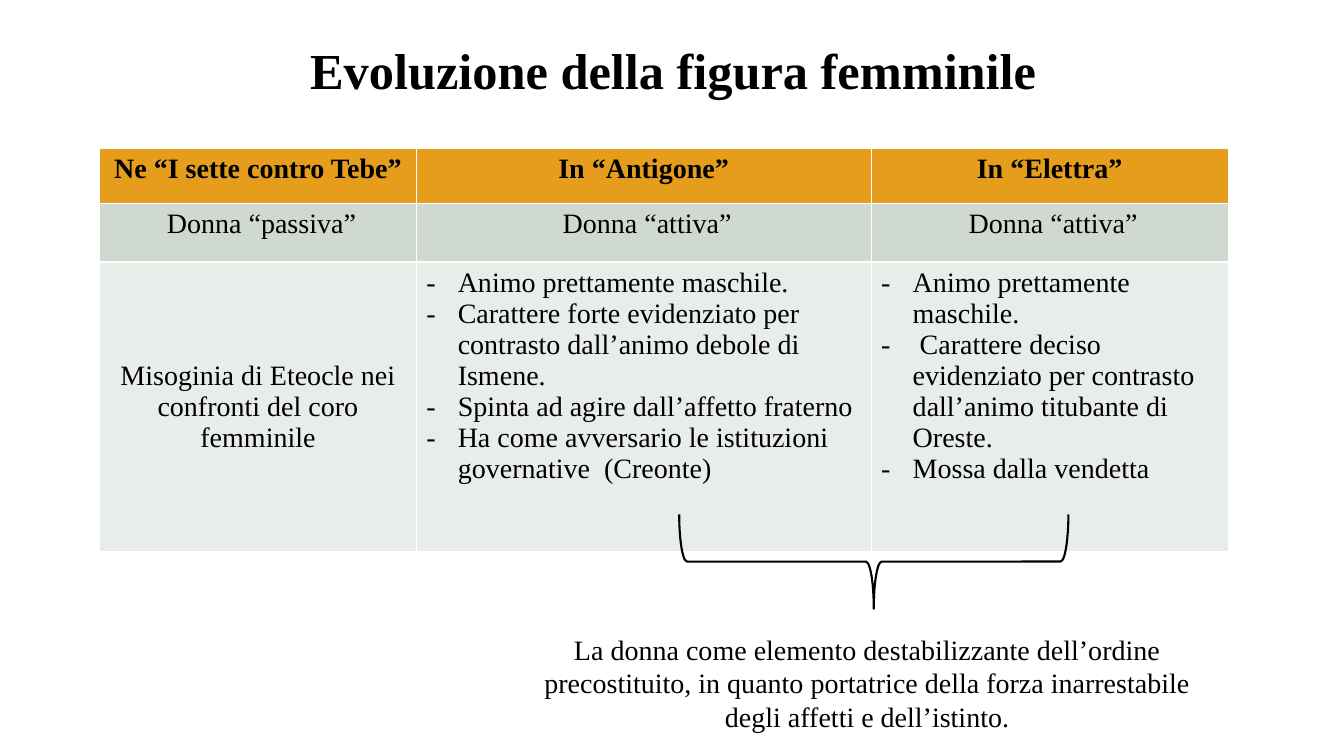
from lxml import etree
from pptx import Presentation
from pptx.dml.color import RGBColor
from pptx.enum import shapes, text
from pptx.oxml import ns
from pptx.util import Pt

FONT = "Times New Roman"
BLACK = "000000"
COLUMN_WIDTHS = (226, 325, 255)
ROW_HEIGHTS = (39.6, 41.6, 207)
ROW_FILLS = ("E59D1B", "D0D9CF", "E9EDE9")
WORKS = ("Ne “I sette contro Tebe”", "In “Antigone”", "In “Elettra”")
ROLES = (" Donna “passiva”", " Donna “attiva”", " Donna “attiva”")
MISOGYNY = ("Misoginia di Eteocle nei confronti del coro femminile",)
ANTIGONE = (
    "Animo prettamente maschile.",
    "Carattere forte evidenziato per contrasto dall’animo debole di Ismene.",
    "Spinta ad agire dall’affetto fraterno",
    "Ha come avversario le istituzioni governative  (Creonte)",
)
ELETTRA = (
    "Animo prettamente maschile.",
    " Carattere deciso evidenziato per contrasto dall’animo titubante di Oreste.",
    "Mossa dalla vendetta",
)
CONCLUSION = (
    "La donna come elemento destabilizzante dell’ordine precostituito, "
    "in quanto portatrice della forza inarrestabile degli affetti e dell’istinto."
)


def color(hex_code):
    """Return the colour for a hex string."""
    return RGBColor.from_string(hex_code)


def place(part, left, top, width, height):
    """Move and size a part, in points."""
    part.left, part.top = Pt(left), Pt(top)
    part.width, part.height = Pt(width), Pt(height)


def write(frame, lines, size=20, bold=False, align=text.PP_ALIGN.CENTER):
    """Fill a text frame with one formatted paragraph per line."""
    frame.text = "\n".join(lines)
    for paragraph in frame.paragraphs:
        paragraph.alignment = align
        for run in paragraph.runs:
            run.font.name, run.font.size, run.font.bold = FONT, Pt(size), bold
            run.font.color.rgb = color(BLACK)


def add_dashes(frame):
    """Give every paragraph a hanging dash."""
    for paragraph in frame.paragraphs:
        properties = paragraph._p.get_or_add_pPr()
        properties.set("marL", str(Pt(22.5)))
        properties.set("indent", str(Pt(-22.5)))
        etree.SubElement(properties, ns.qn("a:buFont"), typeface=FONT)
        etree.SubElement(properties, ns.qn("a:buChar"), char="-")


def add_title(slide):
    """Format the title placeholder."""
    title = slide.shapes.title
    place(title, 67, 0, 828, 104.4)
    write(title.text_frame, ["Evoluzione della figura femminile"], 36, True)
    title.text_frame.vertical_anchor = text.MSO_ANCHOR.MIDDLE
    title.text_frame.paragraphs[0].line_spacing = 0.9


def add_comparison(slide):
    """Add the table comparing the three tragedies."""
    comparison = slide.shapes.add_table(
        3, 3, Pt(71.3), Pt(106), Pt(sum(COLUMN_WIDTHS)), Pt(sum(ROW_HEIGHTS))
    ).table
    for column, width in zip(comparison.columns, COLUMN_WIDTHS):
        column.width = Pt(width)
    for row, height, fill in zip(comparison.rows, ROW_HEIGHTS, ROW_FILLS):
        row.height = Pt(height)
        for cell in row.cells:
            cell.fill.solid()
            cell.fill.fore_color.rgb = color(fill)
    for index, (work, role) in enumerate(zip(WORKS, ROLES)):
        write(comparison.cell(0, index).text_frame, [work], bold=True)
        write(comparison.cell(1, index).text_frame, [role])
    misogyny = comparison.cell(2, 0)
    write(misogyny.text_frame, MISOGYNY)
    misogyny.vertical_anchor = text.MSO_ANCHOR.MIDDLE
    for index, traits in enumerate((ANTIGONE, ELETTRA), start=1):
        frame = comparison.cell(2, index).text_frame
        write(frame, traits, align=text.PP_ALIGN.LEFT)
        add_dashes(frame)


def add_brace(slide):
    """Add the brace joining the two active heroines."""
    brace = slide.shapes.add_shape(
        shapes.MSO_SHAPE.LEFT_BRACE, Pt(590.4), Pt(262.1), Pt(67.5), Pt(278)
    )
    brace.rotation = 270
    brace.shadow.inherit = False
    brace.fill.background()
    brace.line.color.rgb = color(BLACK)
    brace.line.width = Pt(1.5)


def add_conclusion(slide):
    """Add the closing remark under the brace."""
    conclusion = slide.shapes.add_textbox(Pt(364), Pt(448), Pt(511), Pt(80))
    conclusion.text_frame.word_wrap = True
    write(conclusion.text_frame, [CONCLUSION])


def main():
    """Build and save the slide."""
    deck = Presentation()
    deck.slide_width, deck.slide_height = Pt(960), Pt(540)
    slide = deck.slides.add_slide(deck.slide_layouts[5])
    add_title(slide)
    add_comparison(slide)
    add_brace(slide)
    add_conclusion(slide)
    deck.save("out.pptx")


if __name__ == "__main__":
    main()
